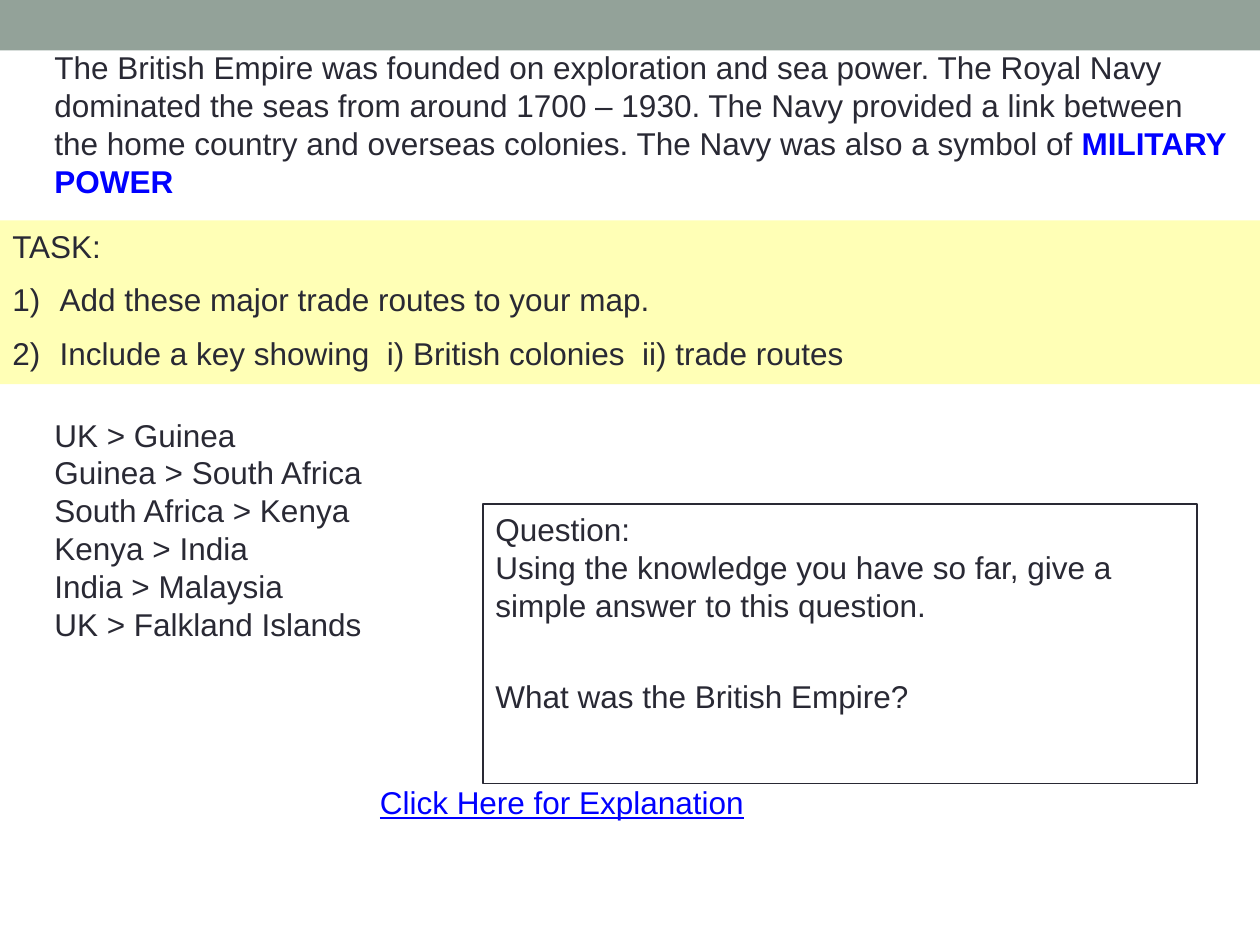
from lxml import etree
from pptx import Presentation
from pptx.dml.color import RGBColor
from pptx.enum import shapes, text
from pptx.oxml import ns
from pptx.util import Pt

INK = RGBColor(0x29, 0x29, 0x34)
BLUE = RGBColor(0x00, 0x00, 0xFF)
SAGE = RGBColor(0x93, 0xA2, 0x99)
YELLOW = RGBColor(0xFF, 0xFF, 0x99)


def add_box(slide, box, fill=None, line=None):
    """Add a rectangle; box is left, top, width, height in points."""
    shape = slide.shapes.add_shape(
        shapes.MSO_SHAPE.RECTANGLE, *[Pt(length) for length in box])
    shape.shadow.inherit = False
    if fill is None:
        shape.fill.background()
    else:
        shape.fill.solid()
        shape.fill.fore_color.rgb = fill
    if line is None:
        shape.line.fill.background()
    else:
        shape.line.color.rgb = line
        shape.line.width = Pt(0.75)
    return shape


def add_text(slide, box):
    return slide.shapes.add_textbox(*[Pt(length) for length in box])


def style(span, color=INK):
    span.font.name = "Arial"
    span.font.size = Pt(18)
    span.font.color.rgb = color


def write(shape, lines, gap=0):
    """Write one paragraph per line, with a gap before all but the first."""
    frame = shape.text_frame
    frame.word_wrap = True
    frame.vertical_anchor = text.MSO_ANCHOR.TOP
    frame.text = "\n".join(lines)
    for index, para in enumerate(frame.paragraphs):
        para.alignment = text.PP_ALIGN.LEFT
        para.space_before = Pt(gap if index else 0)
        for span in para.runs:
            style(span)
    return frame


def add_intro(slide, box):
    frame = write(add_text(slide, box), [
        "The British Empire was founded on exploration and sea power. The Royal Navy\v"
        "dominated the seas from around 1700 – 1930. The Navy provided a link between \v"
        "the home country and overseas colonies. The Navy was also a symbol of "])
    frame.word_wrap = False
    para = frame.paragraphs[0]
    for index, word in enumerate(["MILITARY", "POWER"]):
        if index:
            para.add_line_break()
        span = para.add_run()
        span.text = word
        style(span, BLUE)
        span.font.bold = True


def add_task(slide, box):
    shape = add_box(slide, box, fill=YELLOW)
    color = shape.fill._xPr.find(".//" + ns.qn("a:srgbClr"))
    etree.SubElement(color, ns.qn("a:alpha"), val="71000")
    frame = write(shape, [
        "TASK:",
        "Add these major trade routes to your map.",
        "Include a key showing  i) British colonies  ii) trade routes"], gap=9)
    # Numbered steps with a hanging indent
    for para in frame.paragraphs[1:]:
        props = para._p.get_or_add_pPr()
        props.set("marL", str(Pt(27)))
        props.set("indent", str(-Pt(27)))
        etree.SubElement(props, ns.qn("a:buFont"), typeface="+mj-lt")
        etree.SubElement(props, ns.qn("a:buAutoNum"), type="arabicParenR")


def add_routes(slide, box):
    write(add_text(slide, box), ["\v".join([
        "UK > Guinea", "Guinea > South Africa", "South Africa > Kenya",
        "Kenya > India", "India > Malaysia", "UK > Falkland Islands"])])


def add_question(slide, box):
    write(add_box(slide, box, line=INK), [
        "Question:\vUsing the knowledge you have so far, "
        "give a simple answer to this question.",
        "What was the British Empire?"], gap=30.5)


def add_explanation(slide, box):
    frame = write(add_text(slide, box), ["Click Here for Explanation"])
    span = frame.paragraphs[0].runs[0]
    style(span, BLUE)
    span.font.underline = True


def main():
    deck = Presentation()
    deck.slide_width, deck.slide_height = Pt(720), Pt(540)
    slide = deck.slides.add_slide(deck.slide_layouts[6])
    add_box(slide, (0, 0, 720, 28.8), fill=SAGE)  # top band
    add_task(slide, (0, 126, 720, 93.6))
    add_intro(slide, (24, 24, 686, 93.6))
    add_routes(slide, (24, 234, 600, 136.8))
    add_question(slide, (276, 288, 408, 159.6))
    add_explanation(slide, (210, 444, 462, 28.8))
    deck.save("out.pptx")


if __name__ == "__main__":
    main()
